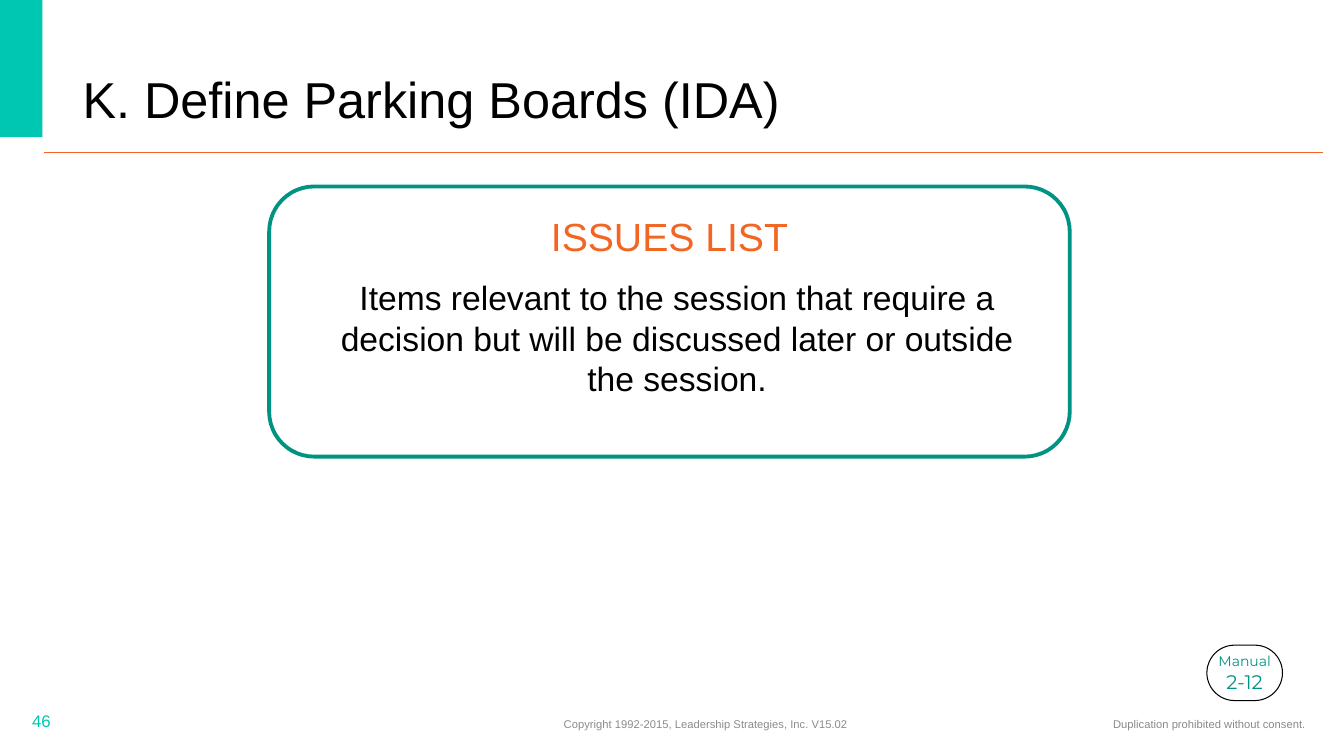
from pptx import Presentation
from pptx import util as u
from pptx.dml.color import RGBColor
from pptx.enum import shapes, text
from pptx.oxml.ns import qn
from lxml import etree

PX = 9144  # EMU per px, 100 px to the inch

HUES = {"teal": "00C7B1", "deep": "009383", "orange": "F26522",
        "black": "000000", "white": "FFFFFF", "gray": "898989", "mist": "8C8C8C"}
ALIGN = {"l": text.PP_ALIGN.LEFT, "c": text.PP_ALIGN.CENTER, "r": text.PP_ALIGN.RIGHT}
ANCHOR = {"t": text.MSO_ANCHOR.TOP, "m": text.MSO_ANCHOR.MIDDLE, "b": text.MSO_ANCHOR.BOTTOM}

# Content: words, box, size, color, align, anchor, line spacing
TEXTS = [
    ("Duplication prohibited without consent.", (742, 698, 563, 40), 8, "gray", "r", "m", None),
    ("K. Define Parking Boards (IDA)", (72, 57, 812, 76), 36, "black", "l", "b", 0.9),
    ("46", (22, 695, 300, 40), 12, "teal", "l", "m", None),
    ("Copyright 1992-2015, Leadership Strategies, Inc. V15.02",
     (362, 698, 676, 40), 8, "mist", "c", "m", None),
    ("ISSUES LIST", (267, 198, 794, 98), 28, "orange", "c", "m", u.Pt(14.4)),
    ("Items relevant to the session that require a decision but will be "
     "discussed later or outside the session.",
     (312, 270, 719, 131), 24, "black", "c", "t", None),
]
# Shapes: preset, box, fill, line, line width, corner
BAR = ("RECTANGLE", (-2, -2, 44, 138), "teal", None, 0, None)
FRAME = ("ROUNDED_RECTANGLE", (267, 185, 794, 268), None, "deep", 2.75, 0.1667)
BADGE = ("ROUNDED_RECTANGLE", (1197, 640, 75, 55), "white", "black", 0.75, 0.5)
RULE = (44, 151, 1312, 151)
LABEL = [("Manual", 10), ("2-12", 14)]


def emu(box):
    return [n * PX for n in box]


def color(name):
    return RGBColor.from_string(HUES[name])


def style(run, size, hue, face="Arial"):
    run.font.size = u.Pt(size)
    run.font.name = face
    run.font.color.rgb = color(hue)


def add_form(kind, box, fill, line, width, corner):
    form = slide.shapes.add_shape(shapes.MSO_SHAPE[kind], *emu(box))
    form.shadow.inherit = False
    if corner is not None:
        form.adjustments[0] = corner
    if fill:
        form.fill.solid()
        form.fill.fore_color.rgb = color(fill)
    else:
        form.fill.background()
    if line:
        form.line.color.rgb = color(line)
        form.line.width = u.Pt(width)
    else:
        form.line.fill.background()
    return form


def add_words(words, box, size, hue, align, anchor, space):
    frame = slide.shapes.add_textbox(*emu(box)).text_frame
    frame.word_wrap = True
    frame.vertical_anchor = ANCHOR[anchor]
    frame.text = words
    para = frame.paragraphs[0]
    para.alignment = ALIGN[align]
    if space:
        para.line_spacing = space
    style(para.runs[0], size, hue)


deck = Presentation()
deck.slide_width, deck.slide_height = emu((1333, 750))
slide = deck.slides.add_slide(deck.slide_layouts[6])

# Side bar, rule and frame
add_form(*BAR)
rule = slide.shapes.add_connector(shapes.MSO_CONNECTOR.STRAIGHT, *emu(RULE))
rule.line.color.rgb = color("orange")
rule.line.width = u.Pt(0.5)
etree.SubElement(rule.element.spPr, qn("a:effectLst"))
add_form(*FRAME)

# Title, body and footers
for item in TEXTS:
    add_words(*item)

# Manual page badge
frame = add_form(*BADGE).text_frame
frame.word_wrap = False
frame.vertical_anchor = ANCHOR["m"]
para = frame.paragraphs[0]
para.text = "\v".join(words for words, size in LABEL)
para.alignment = ALIGN["c"]
for run, (words, size) in zip(para.runs, LABEL):
    style(run, size, "deep", "Montserrat")

deck.save("out.pptx")
